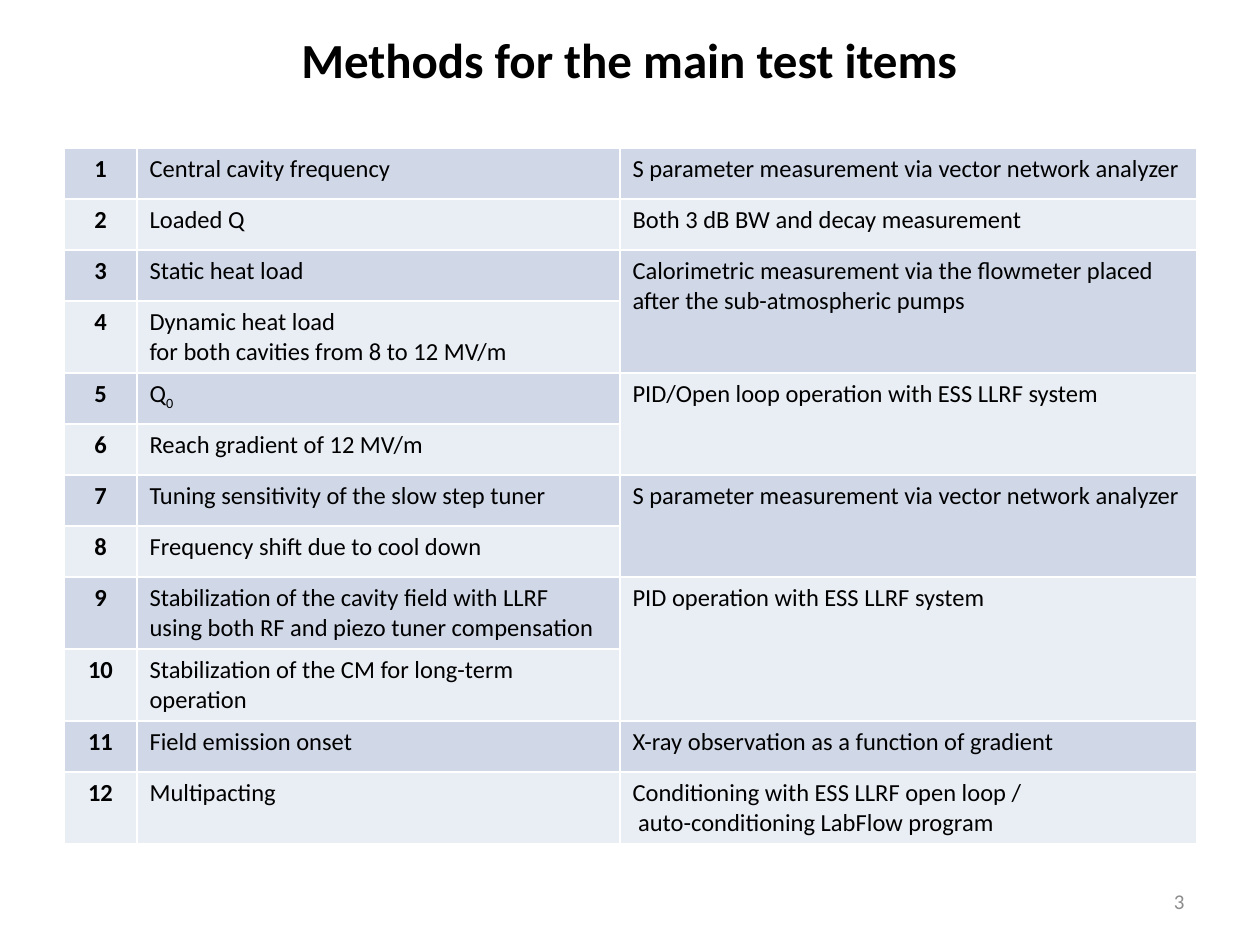
"""Build the slide that lists the main test items and their methods."""
from dataclasses import dataclass

from lxml import etree
from pptx import Presentation
from pptx import util as u
from pptx.dml.color import RGBColor
from pptx.enum import text
from pptx.oxml import ns

PX = 914400 // 126
TITLE = "Methods for the main test items"
PAGE = "3"
NETWORK = "S parameter measurement via vector network analyzer"
GROUPS = [
    (NETWORK, ["Central cavity frequency"]),
    ("Both 3 dB BW and decay measurement", ["Loaded Q"]),
    ("Calorimetric measurement via the flowmeter placed after the sub-atmospheric pumps",
     ["Static heat load", "Dynamic heat load\vfor both cavities from 8 to 12 MV/m"]),
    ("PID/Open loop operation with ESS LLRF system",
     ["Q_0", "Reach gradient of 12 MV/m"]),
    (NETWORK,
     ["Tuning sensitivity of the slow step tuner", "Frequency shift due to cool down"]),
    ("PID operation with ESS LLRF system",
     ["Stabilization of the cavity field with LLRF \vusing both RF and piezo tuner compensation",
      "Stabilization of the CM for long-term operation"]),
    ("X-ray observation as a function of gradient", ["Field emission onset"]),
    ("Conditioning with ESS LLRF open loop /\n auto-conditioning LabFlow program",
     ["Multipacting"]),
]
LEFT, TOP = 64, 148
COLS = [73, 483, 577]
ROW, TALL_ROW = 51, 72
TALL = {4, 9, 10, 12}


@dataclass(frozen=True)
class Theme:
    font: str = "Calibri"
    ink: str = "000000"
    grey: str = "8C8C8C"
    border: str = "FFFFFF"
    bands: tuple = ("D0D8E8", "E9EDF4")
    title: int = 28
    body: int = 14
    page: int = 12


T = Theme()


def px(n):
    return u.Emu(n * PX)


def style(p, size, color=T.ink, bold=False, align=text.PP_ALIGN.LEFT):
    p.alignment = align
    for r in p.runs:
        r.font.name, r.font.size, r.font.bold = T.font, u.Pt(size), bold
        r.font.color.rgb = RGBColor.from_string(color)


def add_text(s, box, words, *look):
    tf = s.shapes.add_textbox(*map(px, box)).text_frame
    tf.word_wrap = True
    tf.vertical_anchor = text.MSO_ANCHOR.MIDDLE
    tf.text = words
    style(tf.paragraphs[0], *look)


def paint(cell, band):
    tcPr = cell._tc.get_or_add_tcPr()
    for side in ("lnL", "lnR", "lnT", "lnB"):
        ln = etree.SubElement(tcPr, ns.qn(f"a:{side}"), w=str(u.Pt(1)))
        fill = etree.SubElement(ln, ns.qn("a:solidFill"))
        etree.SubElement(fill, ns.qn("a:srgbClr"), val=T.border)
    cell.fill.solid()
    cell.fill.fore_color.rgb = RGBColor.from_string(T.bands[band % 2])


def write(cell, words, bold=False, align=text.PP_ALIGN.LEFT):
    base, _, sub = words.partition("_")
    cell.text = base
    if sub:
        r = cell.text_frame.paragraphs[0].add_run()
        r.text = sub
        r._r.get_or_add_rPr().set("baseline", "-25000")
    for p in cell.text_frame.paragraphs:
        style(p, T.body, T.ink, bold, align)


def add_methods(s):
    count = sum(len(items) for _, items in GROUPS)
    heights = [TALL_ROW if n in TALL else ROW for n in range(1, count + 1)]
    frame = s.shapes.add_table(count, len(COLS), px(LEFT), px(TOP),
                               px(sum(COLS)), px(sum(heights)))
    tbl = frame.table
    tbl.first_row = tbl.horz_banding = False
    for col, w in zip(tbl.columns, COLS):
        col.width = px(w)
    for row, h in zip(tbl.rows, heights):
        row.height = px(h)
    i = 0
    for g, (method, items) in enumerate(GROUPS):
        first = tbl.cell(i, 2)
        if len(items) > 1:
            first.merge(tbl.cell(i + len(items) - 1, 2))
        write(first, method)
        for item in items:
            write(tbl.cell(i, 0), str(i + 1), True, text.PP_ALIGN.CENTER)
            write(tbl.cell(i, 1), item)
            for c, band in enumerate((i, i, g)):
                paint(tbl.cell(i, c), band)
            i += 1


def main():
    prs = Presentation()
    prs.slide_width, prs.slide_height = px(1260), px(945)
    s = prs.slides.add_slide(prs.slide_layouts[6])
    add_text(s, (62, 10, 1134, 98), TITLE, T.title, T.ink, True, text.PP_ALIGN.CENTER)
    add_methods(s)
    add_text(s, (903, 876, 294, 50), PAGE, T.page, T.grey, False, text.PP_ALIGN.RIGHT)
    prs.save("out.pptx")


if __name__ == "__main__":
    main()
